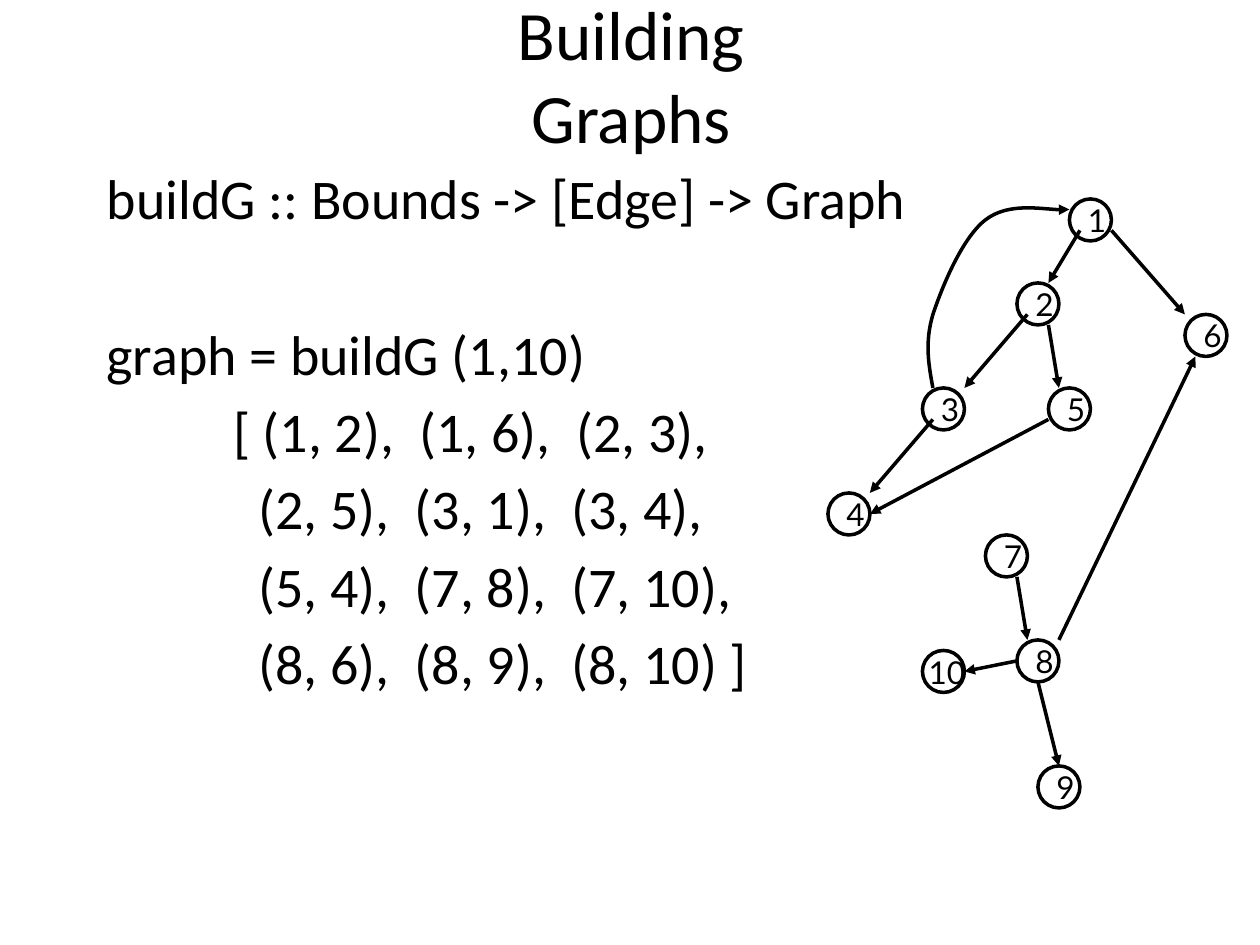
from typing import NamedTuple

from lxml.etree import SubElement
from pptx import Presentation
from pptx.dml.color import RGBColor
from pptx.enum.shapes import MSO_CONNECTOR, MSO_SHAPE
from pptx.enum.text import MSO_ANCHOR, PP_ALIGN
from pptx.oxml.ns import qn
from pptx.util import Cm, Pt

INK = "000000"
UNIT = 2.54 / 12
LEFT, TOP = 16.69, 4.01
NODE_SIZE = 4
LINE_WIDTH = 2


class Node(NamedTuple):
    label: str
    x: int
    y: int
    inset: float = 0.25


class Edge(NamedTuple):
    x1: int
    y1: int
    x2: int
    y2: int


class Line(NamedTuple):
    text: str
    margin: float
    indent: float
    before: float


NODES = [
    Node("1", 23, 0),
    Node("2", 18, 8),
    Node("5", 21, 18),
    Node("6", 34, 11),
    Node("4", 0, 28),
    Node("7", 15, 32),
    Node("8", 18, 42),
    Node("9", 20, 54),
    Node("10", 9, 43, 0),
    Node("3", 9, 18),
]

EDGES = [
    Edge(24, 3, 21, 8),
    Edge(27, 3, 34, 11),
    Edge(19, 11, 13, 18),
    Edge(21, 12, 22, 18),
    Edge(10, 21, 4, 28),
    Edge(21, 21, 4, 30),
    Edge(18, 36, 19, 42),
    Edge(22, 42, 35, 15),
    Edge(20, 46, 22, 54),
    Edge(18, 44, 13, 45),
]

BACK_EDGE = [
    (10, 18),
    (9.6, 15.8), (9.2, 13.7), (10, 11),
    (10.9, 8.3), (12.8, 3.7), (15, 2),
    (17.2, 0.3), (21.7, 1.2), (23, 1),
]

CODE = [
    Line("buildG :: Bounds -> [Edge] -> Graph", 0.95, -0.95, 5.7),
    Line("graph = buildG (1,10)", 0.95, -0.95, 50.5),
    Line("[ (1, 2),  (1, 6),  (2, 3),", 2.55, 0, 5.7),
    Line("(2, 5),  (3, 1),  (3, 4),", 3.06, 0, 5.7),
    Line("(5, 4),  (7, 8),  (7, 10),", 3.06, 0, 5.7),
    Line("(8, 6),  (8, 9),  (8, 10) ]", 3.06, 0, 5.7),
]


def color(value: str) -> RGBColor:
    return RGBColor.from_string(value)


def apply(target, values: dict) -> None:
    for name, value in values.items():
        setattr(target, name, value)


def at(x: float, y: float) -> tuple:
    return Cm(LEFT + x * UNIT), Cm(TOP + y * UNIT)


def add_run(p, text: str, font: str, size: float) -> None:
    r = p.add_run()
    r.text = text
    apply(r.font, {"name": font, "size": Pt(size)})
    r.font.color.rgb = color(INK)


def set_indent(p, margin: float, indent: float) -> None:
    pPr = p._p.get_or_add_pPr()
    pPr.set("marL", str(Cm(margin)))
    pPr.set("indent", str(Cm(indent)))


def style_line(shape, arrow: bool = False) -> None:
    shape.line.width = Pt(LINE_WIDTH)
    shape.line.color.rgb = color(INK)
    if arrow:
        SubElement(shape.line._get_or_add_ln(), qn("a:tailEnd"), type="triangle")


def add_title(s, text: str) -> None:
    tf = s.shapes.add_textbox(Cm(8.05), Cm(0.84), Cm(9.35), Cm(1.32)).text_frame
    apply(tf, {
        "word_wrap": True,
        "vertical_anchor": MSO_ANCHOR.MIDDLE,
        "margin_left": Cm(0.4),
        "margin_right": Cm(0.4),
    })
    p = tf.paragraphs[0]
    p.alignment = PP_ALIGN.CENTER
    add_run(p, text, "Calibri", 39.6)


def add_code(s, lines: list[Line]) -> None:
    tf = s.shapes.add_textbox(Cm(1.9), Cm(3.18), Cm(19.86), Cm(13.31)).text_frame
    tf.word_wrap = True
    for i, line in enumerate(lines):
        p = tf.add_paragraph() if i else tf.paragraphs[0]
        set_indent(p, line.margin, line.indent)
        p.space_before = Pt(line.before)
        add_run(p, line.text, "Calibri", 32)


def add_node(shapes, node: Node) -> None:
    size = Cm(NODE_SIZE * UNIT)
    sp = shapes.add_shape(MSO_SHAPE.OVAL, *at(node.x, node.y), size, size)
    sp.shadow.inherit = False
    sp.fill.background()
    style_line(sp)
    tf = sp.text_frame
    apply(tf, {
        "word_wrap": False,
        "vertical_anchor": MSO_ANCHOR.MIDDLE,
        "margin_left": Cm(node.inset),
    })
    p = tf.paragraphs[0]
    p.alignment = PP_ALIGN.LEFT
    set_indent(p, 0.79, -0.79)
    add_run(p, node.label, "Lato", 18)


def add_edge(shapes, edge: Edge) -> None:
    start, end = at(edge.x1, edge.y1), at(edge.x2, edge.y2)
    sp = shapes.add_connector(MSO_CONNECTOR.STRAIGHT, *start, *end)
    style_line(sp, arrow=True)
    SubElement(sp._element.spPr, qn("a:effectLst"))


def add_curve(shapes, points: list[tuple]) -> None:
    start, *rest = [at(x, y) for x, y in points]
    builder = shapes.build_freeform(*start)
    builder.add_line_segments(rest, close=False)
    sp = builder.convert_to_shape()
    outline = next(sp._element.iter(qn("a:path")))
    segments = outline.findall(qn("a:lnTo"))
    for i in range(0, len(segments), 3):
        curve = SubElement(outline, qn("a:cubicBezTo"))
        for segment in segments[i:i + 3]:
            curve.append(segment[0])
            outline.remove(segment)
    sp.shadow.inherit = False
    sp.fill.background()
    style_line(sp, arrow=True)


def main() -> None:
    prs = Presentation()
    apply(prs, {"slide_width": Cm(25.4), "slide_height": Cm(19.05)})
    s = prs.slides.add_slide(prs.slide_layouts[6])
    add_title(s, "Building Graphs")
    add_code(s, CODE)
    graph = s.shapes.add_group_shape().shapes
    for node in NODES:
        add_node(graph, node)
    for edge in EDGES:
        add_edge(graph, edge)
    add_curve(graph, BACK_EDGE)
    prs.save("out.pptx")


if __name__ == "__main__":
    main()
